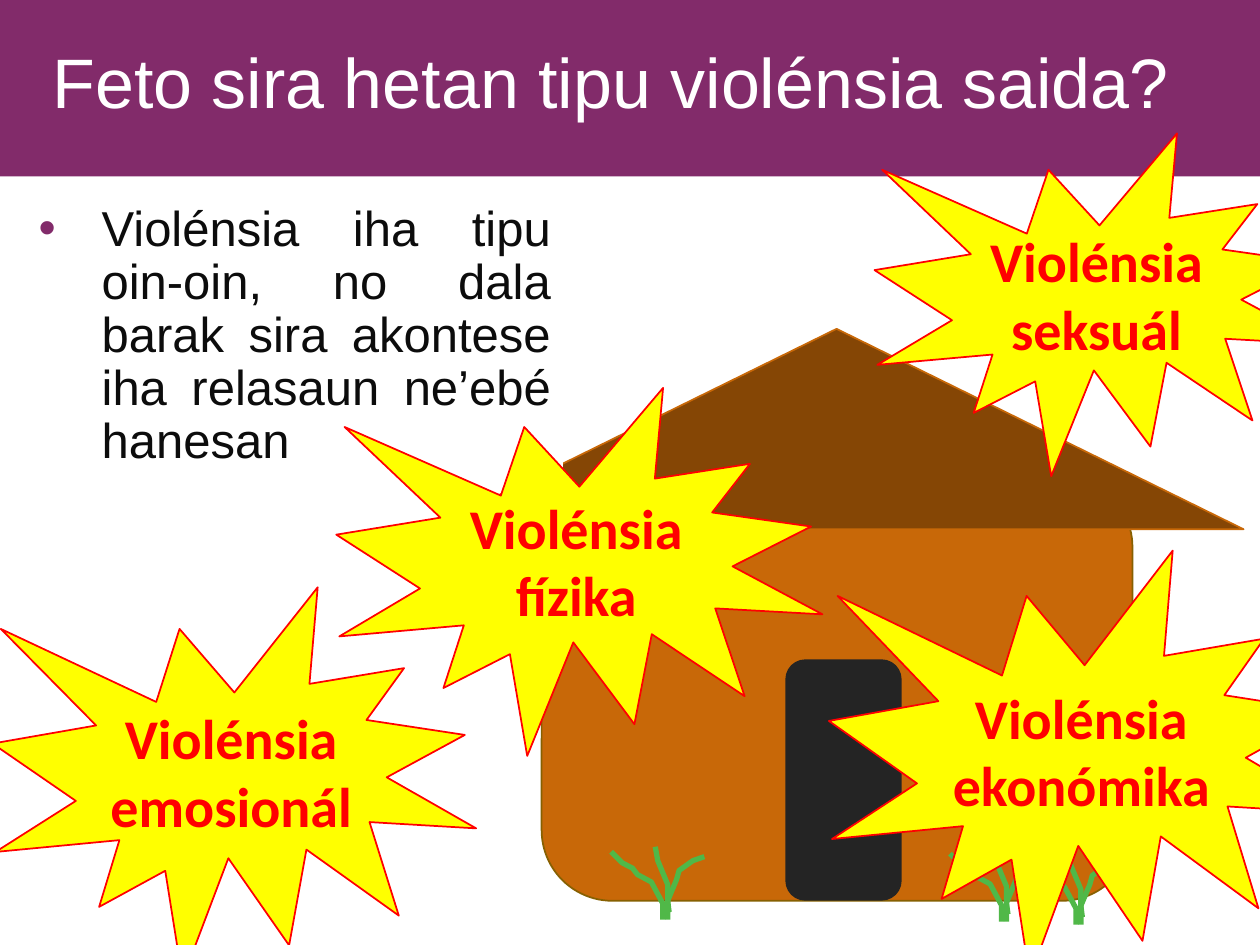
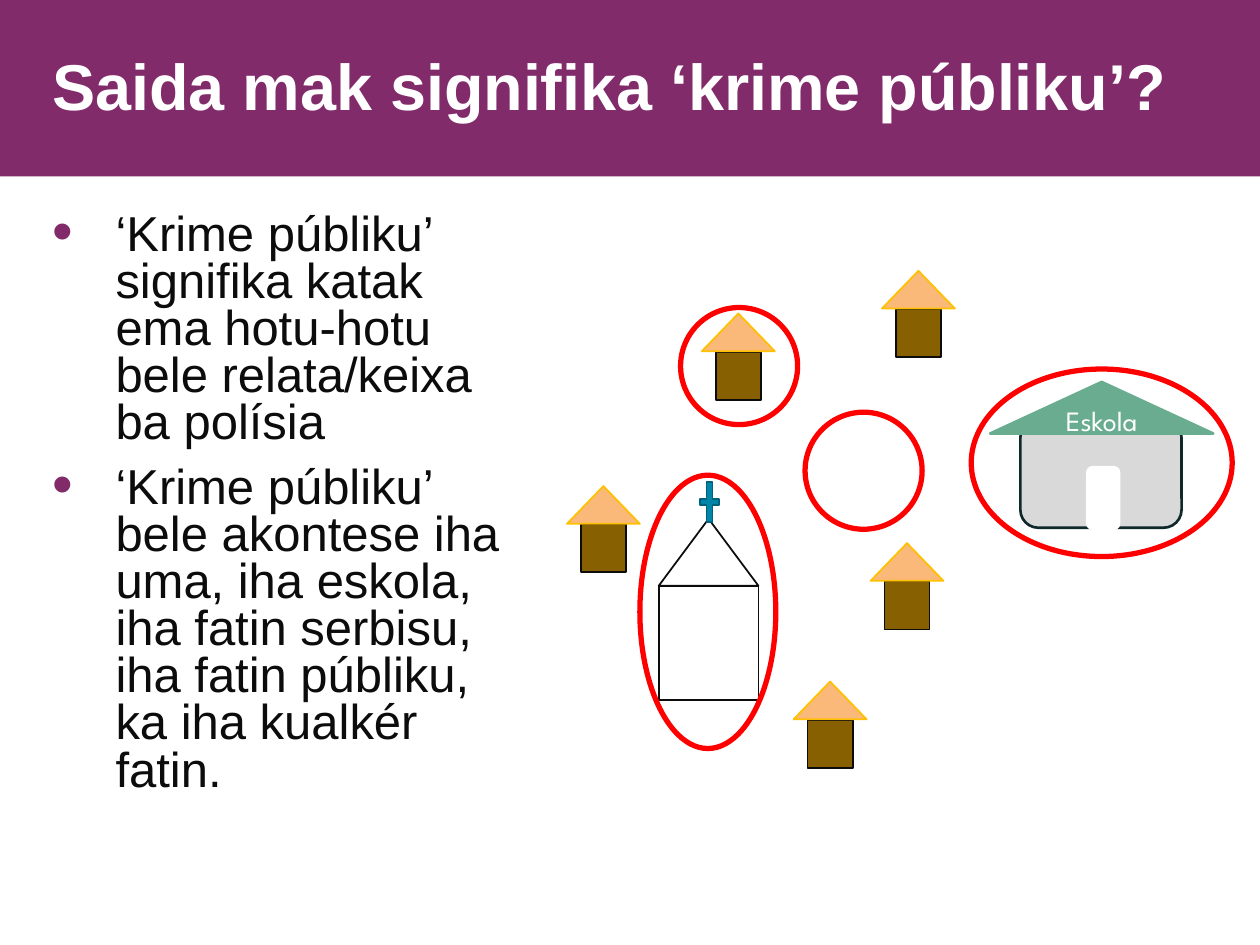
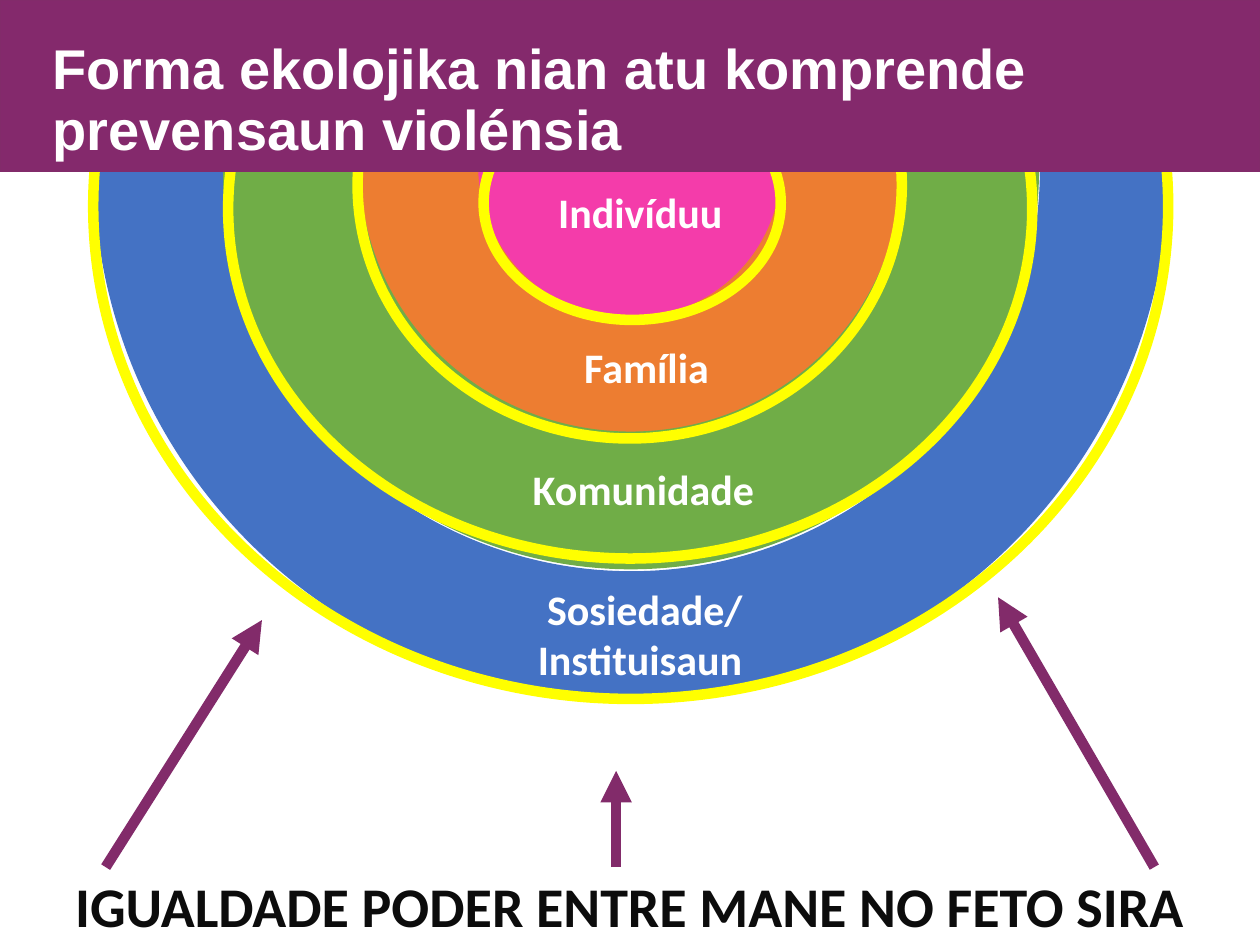
import pptx
import pptx.util
import pptx.dml.color
import pptx.enum.shapes
import pptx.enum.text
import pptx.oxml
from lxml import etree

Cm = pptx.util.Cm
Pt = pptx.util.Pt
Rgb = pptx.dml.color.RGBColor.from_string
Kind = pptx.enum.shapes.MSO_SHAPE
Align = pptx.enum.text.PP_ALIGN
Anchor = pptx.enum.text.MSO_ANCHOR
qn = pptx.oxml.ns.qn

hues = {
    "plum": "822B6A", "band": "84296C", "white": "FFFFFF", "ink": "0C0C0C",
    "red": "FF0000", "yellow": "FFFF00", "clay": "C86808", "earth": "854605",
    "brown": "876001", "coal": "242424", "leaf": "50B848",
    "peach": "FAB979", "gold": "FFC000", "grey": "D9D9D9", "pine": "0F282A",
    "mint": "6AAC90", "teal": "0084A8", "deep": "00627C",
    "pink": "F43CAA", "orange": "ED7D31", "green": "70AD47", "blue": "4472C4",
}


def draw(slide, kind, box, fill=None, line=None, width=1):
    """Add a preset shape, or a text box when kind is None; box is in cm."""
    place = [Cm(n) for n in box]
    if kind is None:
        return slide.shapes.add_textbox(*place)
    shape = slide.shapes.add_shape(kind, *place)
    shape.shadow.inherit = False
    if fill:
        shape.fill.solid()
        shape.fill.fore_color.rgb = Rgb(hues[fill])
    else:
        shape.fill.background()
    if line:
        shape.line.color.rgb = Rgb(hues[line])
        shape.line.width = Pt(width)
    else:
        shape.line.fill.background()
    return shape


def say(shape, text, size=24, font="Calibri", hue="white", bold=False,
        align=Align.LEFT, anchor=Anchor.TOP, lead=None, before=0, bullet=None):
    """Write text, one paragraph a line; bullet is its size in percent."""
    frame = shape.text_frame
    frame.word_wrap = True
    frame.vertical_anchor = anchor
    for i, words in enumerate(text.split("\n")):
        para = frame.add_paragraph() if i else frame.paragraphs[0]
        para.alignment = align
        if lead:
            para.line_spacing = lead
        if i and before:
            para.space_before = Pt(before)
        if bullet:
            props = para._p.get_or_add_pPr()
            props.set("marL", str(Cm(1.27)))
            props.set("indent", str(-Cm(1.27)))
            tint = etree.SubElement(props, qn("a:buClr"))
            etree.SubElement(tint, qn("a:srgbClr")).set("val", hues["plum"])
            etree.SubElement(props, qn("a:buSzPct")).set("val", str(bullet * 1000))
            etree.SubElement(props, qn("a:buFont")).set("typeface", "Arial")
            etree.SubElement(props, qn("a:buChar")).set("char", "•")
        run = para.add_run()
        run.text = words
        run.font.size = Pt(size)
        run.font.name = font
        run.font.bold = bold
        run.font.color.rgb = Rgb(hues[hue])


deck = pptx.Presentation()
deck.slide_width, deck.slide_height = Cm(25.4), Cm(19.05)
types, crime, model = [deck.slides.add_slide(deck.slide_layouts[6]) for _ in range(3)]

# Model: base line of text and half rings, which the band covers at the top
base = draw(model, Kind.RECTANGLE, (0, 3.45, 25.4, 15.6), "white", "white")
say(base, "IGUALDADE PODER ENTRE MANE NO FETO SIRA", size=32, hue="ink",
    bold=True, align=Align.CENTER, anchor=Anchor.BOTTOM)
core = draw(model, Kind.PIE, (9.5, 0.3, 6.25, 6.25), "pink", "pink")
core.adjustments[0], core.adjustments[1] = 0, 108
for box, hue, thick in [
    ((7.21, -2.13, 10.97, 10.97), "orange", 0.22),
    ((4.5, -4.67, 16.43, 16.13), "green", 0.17),
    ((1.91, -7.29, 21.64, 21.39), "blue", 0.12),
]:
    arc = draw(model, Kind.BLOCK_ARC, box, hue, hue)
    for i, value in enumerate((0, 108, thick)):
        arc.adjustments[i] = value
for box in [
    (9.75, 1.73, 5.99, 4.72), (7.21, -1.37, 10.97, 10.21),
    (4.6, -2.84, 16.21, 14.1), (1.88, -5.77, 21.67, 19.86),
]:
    draw(model, Kind.OVAL, box, line="yellow", width=6)

# Bands and titles
for slide, text, high, fill, line, top, size, bold, lead in [
    (types, "Feto sira hetan tipu violénsia saida?",
     3.56, "plum", None, 0.97, 40, False, 0.8),
    (crime, "Saida mak signifika ‘krime públiku’?",
     3.56, "plum", None, 0.97, 37, True, 0.9),
    (model, "Forma ekolojika nian atu komprende prevensaun violénsia",
     3.45, "band", "plum", 0.71, 32, True, 0.9),
]:
    draw(slide, Kind.RECTANGLE, (0, 0, 25.4, high), fill, line)
    title = draw(slide, None, (0.81, top, 23.62, 1.73))
    say(title, text, size=size, font="Arial", bold=bold, lead=lead)

# Types: house
draw(types, Kind.ROUNDED_RECTANGLE, (10.92, 9.6, 11.91, 8.56), "clay", "brown")
draw(types, Kind.ISOSCELES_TRIANGLE, (8.66, 6.63, 16.41, 4.04), "earth", "clay")
draw(types, Kind.ROUNDED_RECTANGLE, (15.85, 13.31, 2.31, 4.83), "coal", "coal")

# Types: three plants of three stems
stems = [
    [(0, 0.1), (0.23, 0.33), (0.43, 0.43), (0.53, 0.56), (0.81, 0.71),
     (1.04, 1.14), (1.04, 1.47)],
    [(1.17, 1.32), (1.14, 1.09), (1.32, 0.66), (1.37, 0.48), (1.65, 0.28),
     (1.88, 0.2)],
    [(0.89, 0), (0.94, 0.28), (1.14, 0.76), (1.14, 1.47)],
]
for left, top in [(12.32, 17.07), (19.15, 17.11), (20.65, 17.17)]:
    for stem in stems:
        dots = [(Cm(left + x), Cm(top + y)) for x, y in stem]
        path = types.shapes.build_freeform(*dots[0])
        path.add_line_segments(dots[1:], close=False)
        twig = path.convert_to_shape()
        twig.shadow.inherit = False
        twig.fill.background()
        twig.line.color.rgb = Rgb(hues["leaf"])
        twig.line.width = Pt(3)

# Types: bursts, the last one above the text
bursts = [
    ("Violénsia seksuál", (17.63, 2.69, 9.07, 6.91)),
    ("Violénsia emosionál", (-0.15, 11.84, 9.75, 7.9)),
    ("Violénsia ekonómika", (16.71, 11.1, 10.31, 8.61)),
    ("Violénsia fízika", (6.78, 7.82, 9.8, 7.42)),
]
for text, box in bursts:
    if text == "Violénsia fízika":
        note = draw(types, Kind.RECTANGLE, (0.53, 3.99, 10.82, 5.64), "white")
        say(note, "Violénsia iha tipu oin-oin, no dala barak sira akontese "
            "iha relasaun ne’ebé hanesan", size=28, font="Arial", hue="ink",
            align=Align.JUSTIFY, lead=0.9, bullet=100)
    burst = draw(types, Kind.EXPLOSION1, box, "yellow", "red")
    say(burst, text, size=32, hue="red", bold=True,
        align=Align.CENTER, anchor=Anchor.MIDDLE)

# Crime: text
body = draw(crime, None, (0.81, 4.19, 9.75, 12.55))
say(body, "‘Krime públiku’ signifika katak ema hotu-hotu bele relata/keixa ba polísia\n"
    "‘Krime públiku’ bele akontese iha uma, iha eskola, iha fatin serbisu, "
    "iha fatin públiku, ka iha kualkér fatin.",
    size=28, font="Arial", hue="ink", lead=0.8, before=10, bullet=120)

# Crime: homes
for x, y in [(16, 13.74), (11.43, 9.8), (14.15, 6.32), (17.55, 10.95), (17.78, 5.46)]:
    draw(crime, Kind.RECTANGLE, (x + 0.28, y + 0.77, 0.91, 0.97), "brown", "ink")
    draw(crime, Kind.ISOSCELES_TRIANGLE, (x, y, 1.47, 0.76), "peach", "gold")

# Crime: school
draw(crime, Kind.ROUNDED_RECTANGLE, (20.57, 8.46, 3.25, 2.18), "grey", "pine", 1.5)
draw(crime, Kind.ROUNDED_RECTANGLE, (21.92, 9.42, 0.64, 1.24), "white", "white", 1.5)
roof = draw(crime, Kind.ISOSCELES_TRIANGLE, (19.96, 7.7, 4.5, 1.04), "mint", "mint", 1.5)
say(roof, "Eskola", size=16, font="League Spartan",
    align=Align.CENTER, anchor=Anchor.MIDDLE)

# Crime: church
draw(crime, Kind.RECTANGLE, (13.28, 11.81, 2.01, 2.31), line="ink")
draw(crime, Kind.ISOSCELES_TRIANGLE, (13.28, 10.46, 2.01, 1.35), "white", "ink")
draw(crime, Kind.MATH_PLUS, (14.05, 9.58, 0.51, 1.09), "teal", "deep")

# Crime: red rings
for box in [
    (13.72, 6.2, 2.36, 2.36), (12.9, 9.58, 2.74, 5.51),
    (16.23, 8.31, 2.36, 2.36), (19.58, 7.44, 5.26, 3.78),
]:
    draw(crime, Kind.OVAL, box, line="red", width=3)

# Model: ring labels
for text, box, align in [
    ("Indivíduu", (10.13, 3.63, 5.56, 1.27), Align.CENTER),
    ("Família", (10.52, 6.76, 5.03, 1.27), Align.CENTER),
    ("Komunidade", (10.49, 9.22, 5.16, 1.27), Align.LEFT),
    ("Sosiedade/\nInstituisaun ", (10.13, 11.63, 5.74, 2.31), Align.CENTER),
]:
    say(draw(model, None, box), text, bold=True, align=align)

# Model: arrows
for x, tip, top in [(23.27, 20.12, 12.04), (2.13, 5.28, 12.5), (12.42, 12.42, 15.54)]:
    arrow = model.shapes.add_connector(
        pptx.enum.shapes.MSO_CONNECTOR.STRAIGHT, Cm(x), Cm(17.48), Cm(tip), Cm(top))
    arrow.line.color.rgb = Rgb(hues["plum"])
    arrow.line.width = Pt(6)
    etree.SubElement(arrow.line._get_or_add_ln(), qn("a:tailEnd")).set("type", "triangle")
    etree.SubElement(arrow._element.spPr, qn("a:effectLst"))

deck.save("out.pptx")
